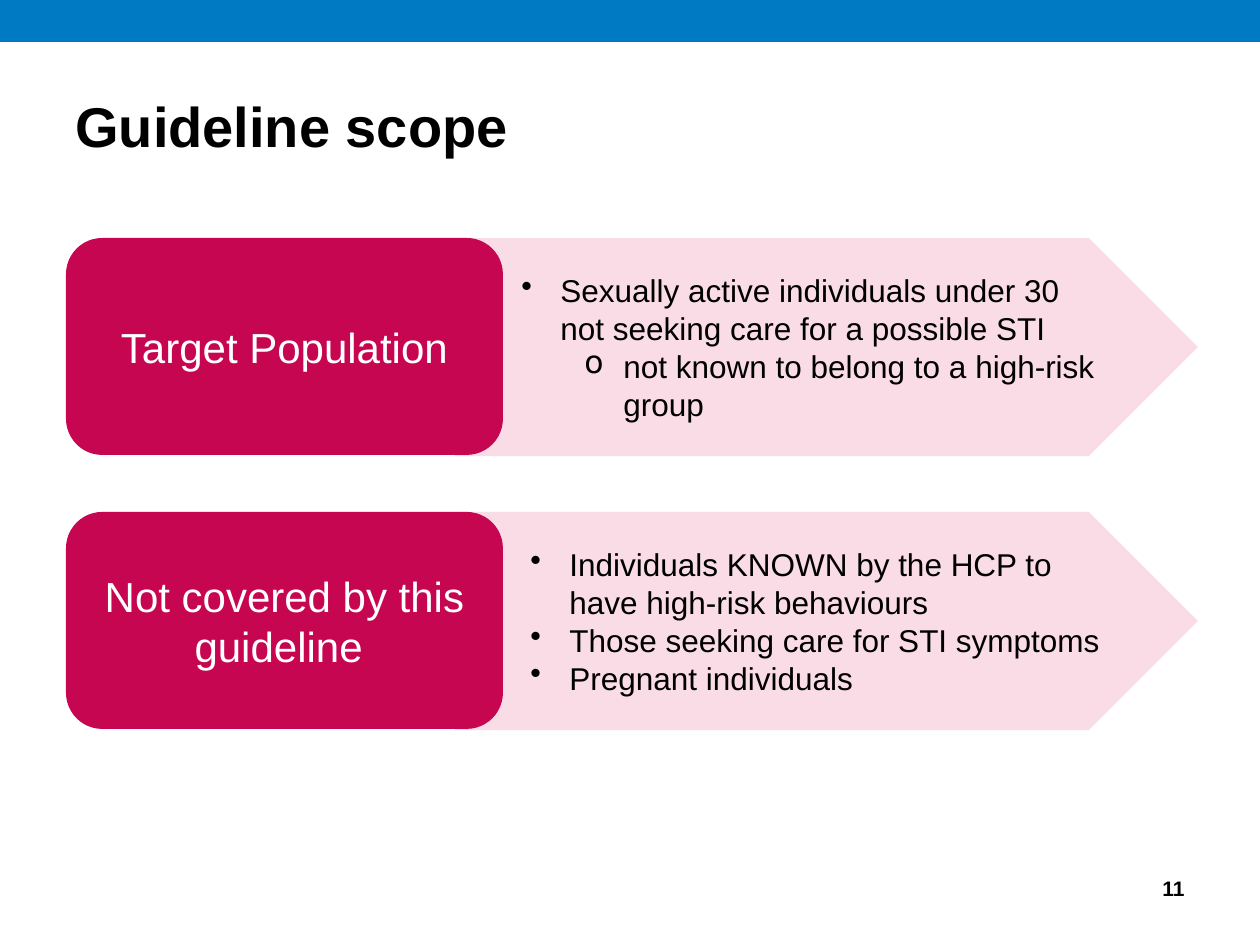
import pptx
import pptx.util
import pptx.dml.color
import pptx.enum.shapes
import pptx.enum.text
import pptx.oxml.ns
import lxml.etree

SHAPE = pptx.enum.shapes.MSO_SHAPE
ALIGN = pptx.enum.text.PP_ALIGN
ANCHOR = pptx.enum.text.MSO_ANCHOR
SCALE = 914400 / 126  # EMU per px
COLORS = {"band": "007BC3", "arrow": "F9DCE6", "label": "C60651",
          "dark": "000000", "light": "FFFFFF"}


def emu(px):
    return pptx.util.Emu(round(px * SCALE))


def color(name):
    return pptx.dml.color.RGBColor.from_string(COLORS[name])


class Deck:
    def __init__(self, width, height, font):
        self.prs = pptx.Presentation()
        self.prs.slide_width, self.prs.slide_height = emu(width), emu(height)
        self.slide = self.prs.slides.add_slide(self.prs.slide_layouts[6])
        self.font = font

    def style(self, para, size, ink, bold=False):
        for run in para.runs:
            run.font.name = self.font
            run.font.size = pptx.util.Pt(size)
            run.font.bold = bold
            run.font.color.rgb = color(ink)

    def shape(self, kind, box, fill):
        shape = self.slide.shapes.add_shape(kind, *map(emu, box))
        shape.shadow.inherit = False
        shape.fill.solid()
        shape.fill.fore_color.rgb = color(fill)
        shape.line.fill.background()
        return shape

    def fill_text(self, shape, text, size, ink, align, bold=False):
        frame = shape.text_frame
        frame.word_wrap = True
        frame.vertical_anchor = ANCHOR.MIDDLE
        frame.text = text
        para = frame.paragraphs[0]
        para.alignment = align
        self.style(para, size, ink, bold)

    def text(self, box, text, size, align):
        shape = self.slide.shapes.add_textbox(*map(emu, box))
        self.fill_text(shape, text, size, "dark", align, bold=True)

    def label(self, box, text):
        shape = self.shape(SHAPE.ROUNDED_RECTANGLE, box, "label")
        self.fill_text(shape, text, 24, "light", ALIGN.CENTER)

    def bullets(self, box, items):
        frame = self.slide.shapes.add_textbox(*map(emu, box)).text_frame
        frame.word_wrap = True
        for i, (level, mark, text) in enumerate(items):
            para = frame.add_paragraph() if i else frame.paragraphs[0]
            para.text = text
            para.level = level
            props = para._p.get_or_add_pPr()
            props.set("marL", str(emu(39 + 63 * level)))
            props.set("indent", str(emu(-39)))
            tag = pptx.oxml.ns.qn("a:buChar")
            lxml.etree.SubElement(props, tag).set("char", mark)
            self.style(para, 18, "dark")


def main():
    deck = Deck(1260, 945, "Arial")

    # Top band, title and page number
    deck.shape(SHAPE.RECTANGLE, (0, 0, 1260, 42), "band")
    deck.text((63, 73, 1134, 105), "Guideline scope", 32, ALIGN.LEFT)
    deck.text((903, 863, 294, 50), "11", 12, ALIGN.RIGHT)

    # Rows: label, left and width of the list, list items
    rows = [
        ("Target Population", 446, 664, [
            (1, "•", "Sexually active individuals under 30 "
                     "not seeking care for a possible STI"),
            (2, "o", "not known to belong to a high-risk group")]),
        ("Not covered by this guideline ", 455, 672, [
            (1, "•", "Individuals KNOWN by the HCP to have high-risk behaviours"),
            (1, "•", "Those seeking care for STI symptoms"),
            (1, "•", "Pregnant individuals")]),
    ]
    for i, (name, left, width, items) in enumerate(rows):
        top = 238 + 274 * i
        deck.shape(SHAPE.PENTAGON, (455, top, 743, 218), "arrow")
        deck.label((66, top, 437, 217), name)
        deck.bullets((left, top + 27, width, 165), items)

    deck.prs.save("out.pptx")


if __name__ == "__main__":
    main()
